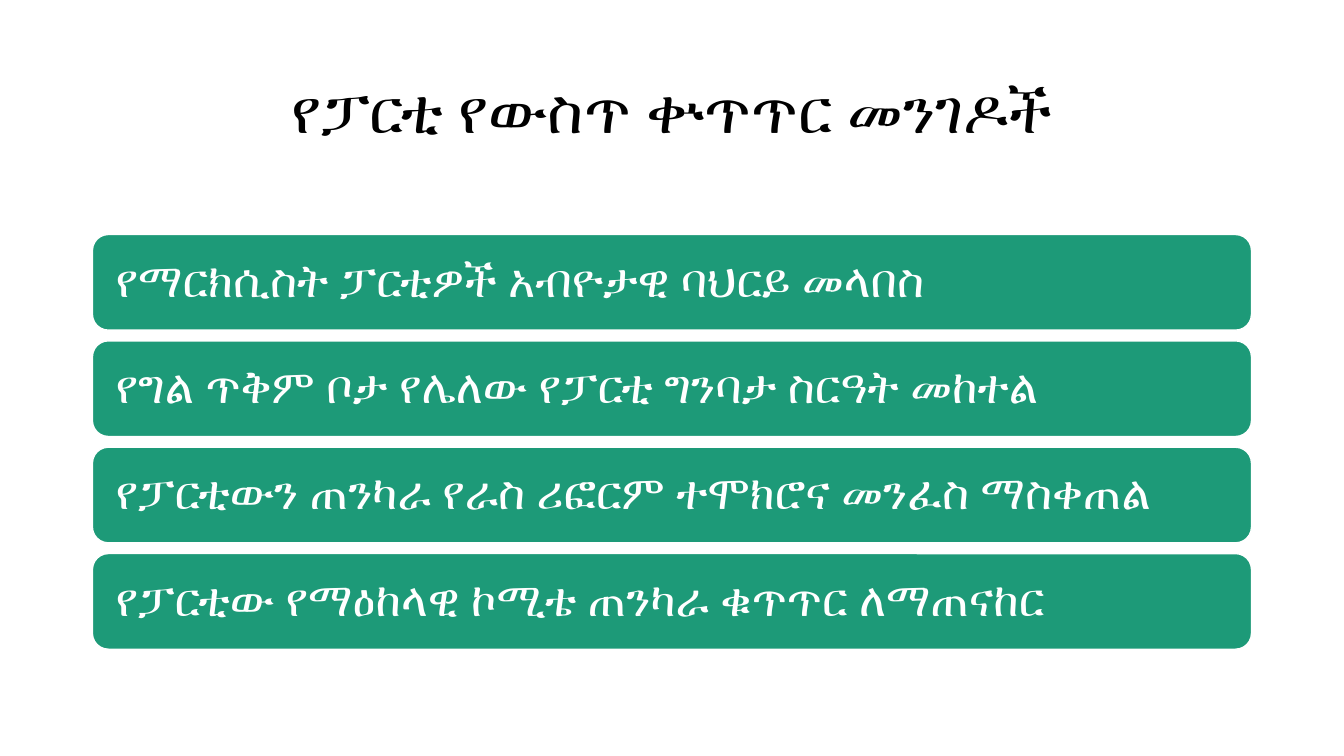
from dataclasses import dataclass

from pptx import Presentation
from pptx.dml.color import RGBColor
from pptx.enum import shapes, text
from pptx.shapes.autoshape import Shape
from pptx.slide import Slide
from pptx.util import Cm, Pt

BLACK = RGBColor(0x00, 0x00, 0x00)
WHITE = RGBColor(0xFF, 0xFF, 0xFF)
GREEN = RGBColor(0x1D, 0x9A, 0x78)

FONT = "Calibri"
LEFT, WIDTH = 2.33, 29.21
TITLE_TOP, TITLE_HEIGHT = 1.01, 3.68
BAR_TOP, BAR_HEIGHT, BAR_PITCH = 5.91, 2.41, 2.68


@dataclass(frozen=True)
class TextStyle:
    size: int
    color: RGBColor
    alignment: text.PP_ALIGN
    side_margin: float


TITLE_STYLE = TextStyle(44, BLACK, text.PP_ALIGN.CENTER, 0.25)
BAR_STYLE = TextStyle(33, WHITE, text.PP_ALIGN.LEFT, 0.47)

TITLE = "የፓርቲ የውስጥ ቍጥጥር መንገዶች"
METHODS = (
    "የማርክሲስት ፓርቲዎች አብዮታዊ ባህርይ መላበስ",
    "የግል ጥቅም ቦታ የሌለው የፓርቲ ግንባታ ስርዓት መከተል",
    "የፓርቲውን ጠንካራ የራስ ሪፎርም ተሞክሮና መንፈስ ማስቀጠል",
    "የፓርቲው የማዕከላዊ ኮሚቴ ጠንካራ ቁጥጥር ለማጠናከር",
)


def write_text(shape: Shape, wording: str, style: TextStyle) -> None:
    frame = shape.text_frame
    frame.word_wrap = True
    frame.vertical_anchor = text.MSO_ANCHOR.MIDDLE
    frame.margin_left = frame.margin_right = Cm(style.side_margin)
    paragraph = frame.paragraphs[0]
    paragraph.alignment = style.alignment
    paragraph.line_spacing = 0.9
    run = paragraph.add_run()
    run.text = wording
    run.font.name = FONT
    run.font.size = Pt(style.size)
    run.font.color.rgb = style.color


def add_title(slide: Slide) -> None:
    title = slide.shapes.add_textbox(
        Cm(LEFT), Cm(TITLE_TOP), Cm(WIDTH), Cm(TITLE_HEIGHT)
    )
    write_text(title, TITLE, TITLE_STYLE)


def add_bar(slide: Slide, top: float, wording: str) -> None:
    bar = slide.shapes.add_shape(
        shapes.MSO_SHAPE.ROUNDED_RECTANGLE,
        Cm(LEFT), Cm(top), Cm(WIDTH), Cm(BAR_HEIGHT),
    )
    bar.shadow.inherit = False
    bar.fill.solid()
    bar.fill.fore_color.rgb = GREEN
    bar.line.color.rgb = WHITE
    bar.line.width = Pt(1)
    write_text(bar, wording, BAR_STYLE)


def main() -> None:
    presentation = Presentation()
    presentation.slide_width = Cm(33.87)
    presentation.slide_height = Cm(19.05)
    slide = presentation.slides.add_slide(presentation.slide_layouts[6])
    add_title(slide)
    for index, method in enumerate(METHODS):
        add_bar(slide, BAR_TOP + index * BAR_PITCH, method)
    presentation.save("out.pptx")


if __name__ == "__main__":
    main()
